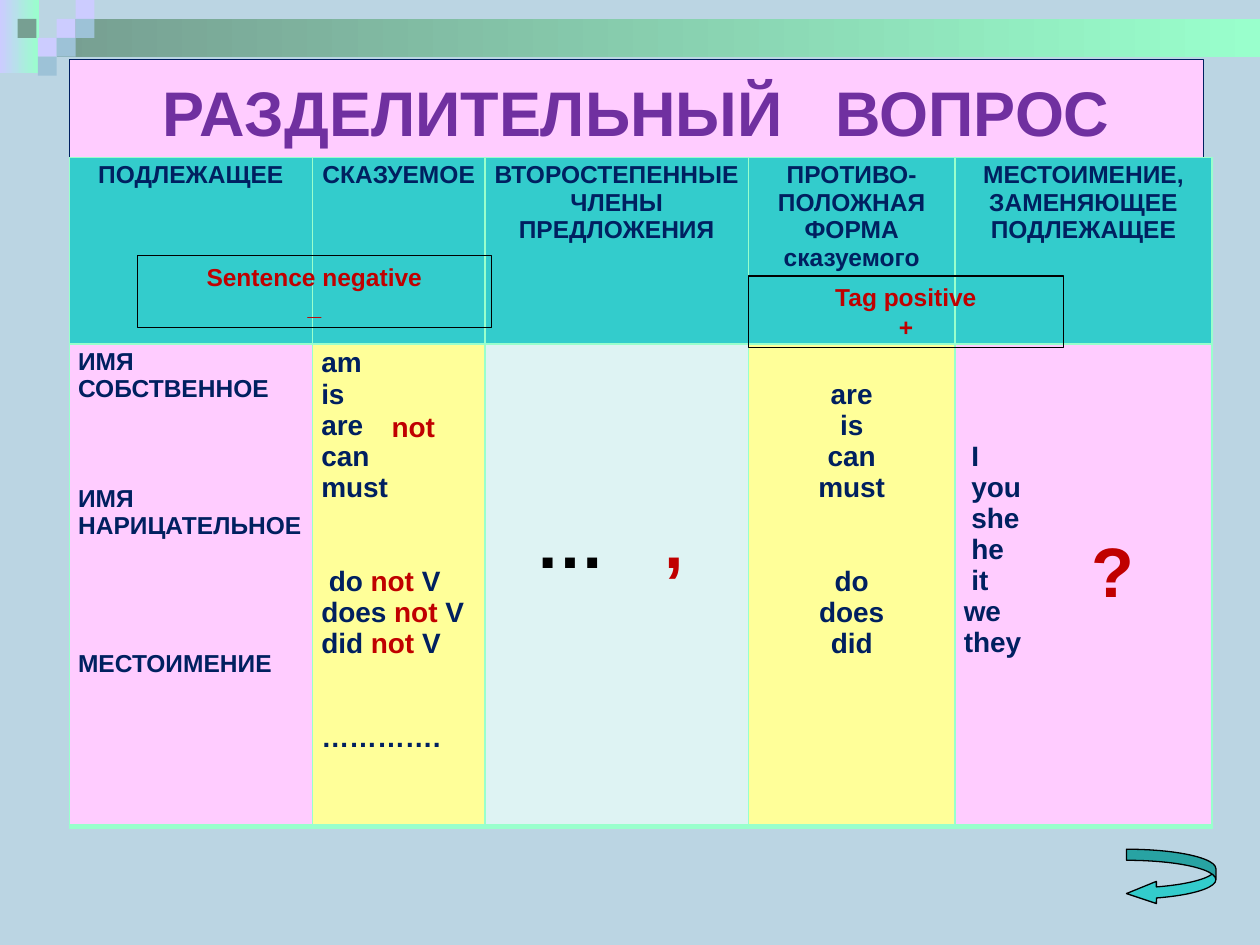
"""Build the grammar slide on Russian-English tag questions."""
from lxml import etree
from pptx import Presentation
from pptx.dml.color import RGBColor
from pptx.enum.shapes import MSO_SHAPE
from pptx.enum.text import MSO_ANCHOR, MSO_AUTO_SIZE, PP_ALIGN
from pptx.oxml.ns import qn
from pptx.util import Inches, Pt

RECTANGLE = MSO_SHAPE.RECTANGLE
CURVED_ARROW = MSO_SHAPE.CURVED_LEFT_ARROW
MIDDLE = MSO_ANCHOR.MIDDLE
FIT_SHAPE = MSO_AUTO_SIZE.SHAPE_TO_FIT_TEXT
LEFT, CENTER = PP_ALIGN.LEFT, PP_ALIGN.CENTER

NAVY, RED, BLACK, PURPLE = "002060", "C00000", "000000", "7030A0"
TEAL, PINK, YELLOW, ICE = "33CCCC", "FFCCFF", "FFFF99", "DEF3F3"
MINT, LILAC, BLUE, SAGE = "99FFCC", "CCCCFF", "9DC2D7", "779F92"
ACCENTS = ("not", ",")
LINE_HEIGHT = 1.12


def rgb(value):
    return RGBColor.from_string(value)


def write(frame, lines, size, color, align=CENTER):
    """Fill a frame with lines of (runs split by |, blank lines above, indent)."""
    frame.word_wrap = True
    for index, line in enumerate(lines):
        text, gap, indent = line if isinstance(line, tuple) else (line, 0, 0)
        para = frame.paragraphs[0] if index == 0 else frame.add_paragraph()
        para.alignment = align
        if gap:
            para.space_before = Pt(round(gap * size * LINE_HEIGHT, 1))
        if indent:
            para._p.get_or_add_pPr().set("marL", str(Inches(indent)))
        para.font.name = "Arial"
        para.font.size = Pt(size)
        para.font.bold = True
        para.font.color.rgb = rgb(color)
        for part in text.split("|"):
            span = para.add_run()
            span.text = part
            if part.strip() in ACCENTS:
                span.font.color.rgb = rgb(RED)
            if part == " ":
                span.font._element.set("spc", str(round(size * 55.6)))


deck = Presentation()
deck.slide_width, deck.slide_height = Inches(10), Inches(7.5)
slide = deck.slides.add_slide(deck.slide_layouts[6])
slide.background.fill.solid()
slide.background.fill.fore_color.rgb = rgb("BBD5E3")

bands = [(0, 0, 0.31, 0.58, LILAC), (0.45, 0.15, 9.55, 0.3, SAGE)]
for left, top, width, height, start in bands:
    band = slide.shapes.add_shape(
        RECTANGLE, Inches(left), Inches(top), Inches(width), Inches(height))
    band.shadow.inherit = False
    band.line.fill.background()
    band.fill.gradient()
    band.fill.gradient_angle = 0
    for stop, color in zip(band.fill.gradient_stops, (start, MINT)):
        stop.color.rgb = rgb(color)

squares = [(3, 1, LILAC), (4, 0, LILAC), (4, 1, BLUE), (2, 2, LILAC),
           (0.93, 1, SAGE), (3, 2, BLUE), (2, 3, BLUE)]
for column, row, color in squares:
    square = slide.shapes.add_shape(
        RECTANGLE, Inches(0.15 * column), Inches(0.15 * row), Inches(0.15), Inches(0.15))
    square.shadow.inherit = False
    square.line.fill.background()
    square.fill.solid()
    square.fill.fore_color.rgb = rgb(color)

title = slide.shapes.add_shape(
    RECTANGLE, Inches(0.55), Inches(0.47), Inches(9), Inches(0.83))
title.shadow.inherit = False
title.fill.solid()
title.fill.fore_color.rgb = rgb(PINK)
title.line.color.rgb = rgb(NAVY)
title.line.width = Pt(0.75)
title.text_frame.vertical_anchor = MIDDLE
write(title.text_frame, ["РАЗДЕЛИТЕЛЬНЫЙ| |ВОПРОС"], 36, PURPLE)

headings = [
    ["ПОДЛЕЖАЩЕЕ"],
    ["СКАЗУЕМОЕ"],
    ["ВТОРОСТЕПЕННЫЕ ЧЛЕНЫ ПРЕДЛОЖЕНИЯ"],
    ["ПРОТИВО-ПОЛОЖНАЯ ФОРМА", "сказуемого"],
    ["МЕСТОИМЕНИЕ, ЗАМЕНЯЮЩЕЕ ПОДЛЕЖАЩЕЕ"],
]
subjects = ["ИМЯ СОБСТВЕННОЕ", ("ИМЯ НАРИЦАТЕЛЬНОЕ", 3, 0), ("МЕСТОИМЕНИЕ", 4, 0)]
predicates = ["am", "is", "are", "can", "must", ("do| not |V", 2, 0.06),
              "does |not |V", "did |not| V", ("………….", 2, 0)]
opposites = ["are", "is", "can", "must", ("do", 2, 0), "does", "did"]
pronouns = [(word, 0, 0.06) for word in ("I", "you", "she", "he", "it")] + ["we", "they"]

header_cells = [(lines, 14, CENTER, 0.03, TEAL) for lines in headings]
body_cells = [
    (subjects, 14, LEFT, 0.03, PINK),
    (predicates, 16, LEFT, 0.03, YELLOW),
    ([], 16, LEFT, 0.03, ICE),
    (opposites, 16, CENTER, 0.28, YELLOW),
    (pronouns, 16, LEFT, 0.77, PINK),
]
column_widths = [1.93, 1.37, 2.09, 1.64, 2.04]
borders = [("a:lnL", 1), ("a:lnR", 1), ("a:lnT", 1), ("a:lnB", 3)]

for top, height, cells in [(1.25, 1.5, header_cells), (2.73, 3.83, body_cells)]:
    table = slide.shapes.add_table(
        1, len(cells), Inches(0.55), Inches(top),
        Inches(sum(column_widths)), Inches(height)).table
    table.first_row = False
    table.horz_banding = False
    for index, (lines, size, align, margin, color) in enumerate(cells):
        table.columns[index].width = Inches(column_widths[index])
        cell = table.cell(0, index)
        cell.margin_left = cell.margin_right = Inches(0.07)
        cell.margin_top, cell.margin_bottom = Inches(margin), Inches(0.03)
        properties = cell._tc.get_or_add_tcPr()
        for tag, weight in borders:
            border = etree.SubElement(properties, qn(tag), w=str(Pt(weight)))
            solid = etree.SubElement(border, qn("a:solidFill"))
            etree.SubElement(solid, qn("a:srgbClr"), val=MINT)
        cell.fill.solid()
        cell.fill.fore_color.rgb = rgb(color)
        write(cell.text_frame, lines, size, NAVY, align)

labels = [
    (2.97, 3.2, 0.62, 0.37, "not", 16, RED),
    (8.52, 4.14, 0.62, 0.77, "?", 40, RED),
    (4.06, 3.91, 1.56, 0.77, "…| |,", 40, BLACK),
]
for left, top, width, height, text, size, color in labels:
    label = slide.shapes.add_textbox(
        Inches(left), Inches(top), Inches(width), Inches(height))
    label.text_frame.auto_size = FIT_SHAPE
    write(label.text_frame, [text], size, color)

arrow = slide.shapes.add_shape(
    CURVED_ARROW, Inches(8.94), Inches(6.74), Inches(0.71), Inches(0.44))
arrow.shadow.inherit = False
for index, value in enumerate((0.2, 0.4, 0.54)):
    arrow.adjustments[index] = value
arrow.fill.solid()
arrow.fill.fore_color.rgb = rgb(TEAL)
arrow.line.color.rgb = rgb(BLACK)
arrow.line.width = Pt(0.75)

notes = [
    (1.09, 2.03, 2.81, ["Sentence negative", "_"]),
    (5.94, 2.19, 2.5, ["Tag positive", "+"]),
]
for left, top, width, lines in notes:
    box = slide.shapes.add_textbox(Inches(left), Inches(top), Inches(width), Inches(0.57))
    box.line.color.rgb = rgb(BLACK)
    box.line.width = Pt(0.75)
    box.text_frame.auto_size = FIT_SHAPE
    write(box.text_frame, lines, 14, RED)

deck.save("out.pptx")
